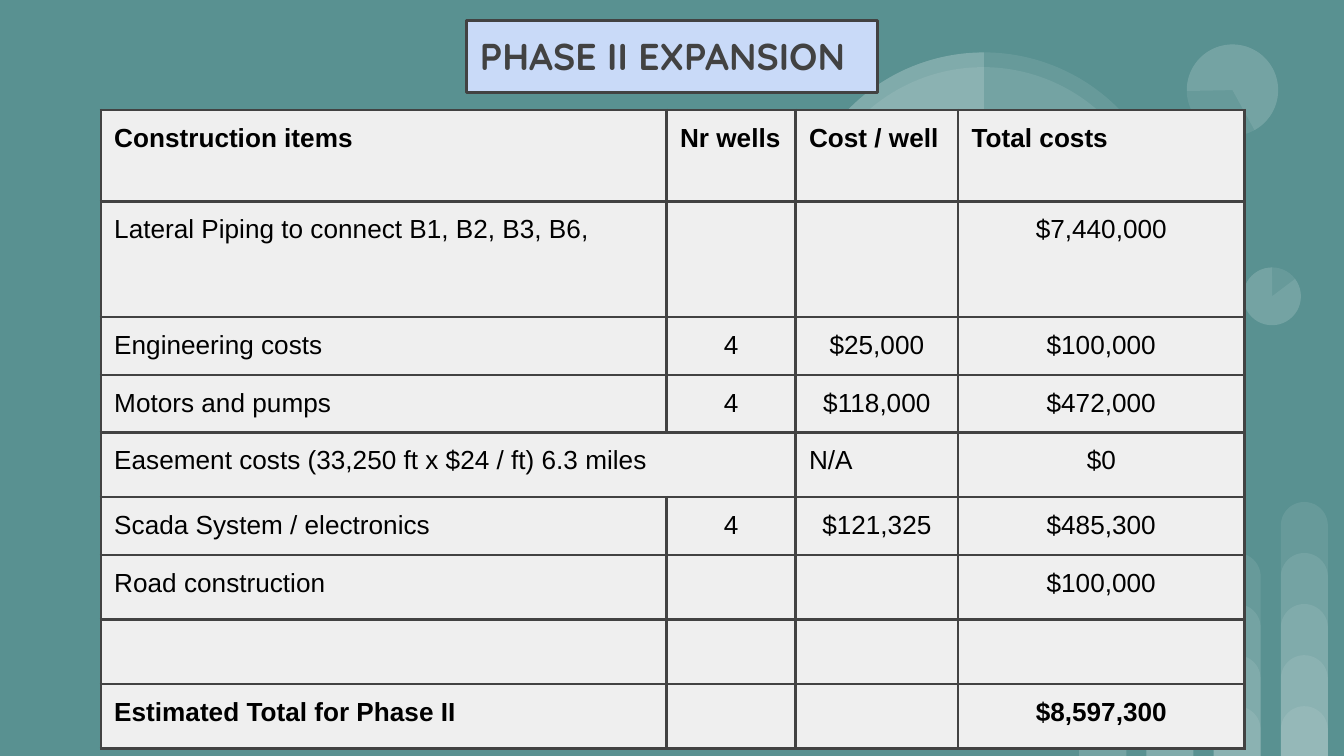
import pptx
import pptx.dml.color
import pptx.enum.shapes
import pptx.enum.text
import pptx.util
from lxml import etree
from pptx.oxml.ns import qn
from pptx.util import Inches

SHAPE = pptx.enum.shapes.MSO_SHAPE
ALIGN = pptx.enum.text.PP_ALIGN
ANCHOR = pptx.enum.text.MSO_ANCHOR

# Content
TITLE = "PHASE II EXPANSION"
ROWS = [
    ("Construction items", "Nr wells", "Cost / well", "Total costs"),
    ("Lateral Piping to connect B1, B2, B3, B6,", "", "", "$7,440,000"),
    ("Engineering costs", "4", "$25,000", "$100,000"),
    ("Motors and pumps", "4", "$118,000", "$472,000"),
    ("Easement costs (33,250 ft x $24 / ft) 6.3 miles", "", "N/A", "$0"),
    ("Scada System / electronics", "4", "$121,325", "$485,300"),
    ("Road construction", "", "", "$100,000"),
    ("", "", "", ""),
    ("Estimated Total for Phase II", "", "", "$8,597,300"),
]
COLUMN_WIDTHS = [4.21, 0.96, 1.21, 2.13]
ROW_HEIGHTS = [0.68, 0.86, 0.43, 0.43, 0.48, 0.43, 0.48, 0.48, 0.48]
EASEMENT_ROW = 4

# Background circles: left, top, diameter, rotation, pie angles (None for a disc)
CIRCLES = [
    (9.25, 1.99, 0.43, 0, None),
    (9.25, 1.99, 0.43, 0, (322.95, 270)),
    (8.83, 0.33, 0.68, 215.9, None),
    (8.83, 0.33, 0.68, 215.9, (322.95, 205.23)),
    (5.91, 0.39, 2.82, 0, None),
    (6.02, 0.5, 2.59, 34.1, None),
    (5.91, 0.39, 2.82, 0, (146.69, 270)),
    (5.91, 0.39, 2.82, 0, (209.24, 270)),
]

TEAL, DARK, PALE, BLUE, WHITE = "599191", "424242", "EFEFEF", "C9DAF8", "FFFFFF"
WIDTH = 10
HEIGHT = WIDTH * 9 / 16
BORDER = pptx.util.Pt(1.5)
MARGINS = {f"margin_{side}": Inches(0.1) for side in ("left", "right", "top", "bottom")}


def apply(target, values):
    for name, value in values.items():
        setattr(target, name, value)


def paint(fill, colour, opacity=None):
    fill.solid()
    fill.fore_color.rgb = pptx.dml.color.RGBColor.from_string(colour)
    if opacity is not None:
        node = fill.fore_color._xFill.find(qn("a:srgbClr"))
        etree.SubElement(node, qn("a:alpha"), val=str(opacity * 1000))


def write(para, text, font, size, colour, bold):
    span = para.add_run()
    span.text = text
    apply(span.font, {"name": font, "size": pptx.util.Pt(size), "bold": bold})
    paint(span.font.fill, colour)


def add_ghost(slide, kind, left, top, width, height):
    shape = slide.shapes.add_shape(kind, *map(Inches, (left, top, width, height)))
    shape.shadow.inherit = False
    shape.line.fill.background()
    paint(shape.fill, WHITE, 9)
    return shape


def add_border(cell):
    properties = cell._tc.get_or_add_tcPr()
    for index, side in enumerate(("lnL", "lnR", "lnT", "lnB")):
        line = etree.Element(qn(f"a:{side}"), w=str(BORDER))
        fill = etree.SubElement(line, qn("a:solidFill"))
        etree.SubElement(fill, qn("a:srgbClr"), val=DARK)
        properties.insert(index, line)


def add_background(slide):
    paint(slide.background.fill, TEAL)
    # Each column of bars is one step taller than the one before
    for column in range(4):
        for level in range(column + 2):
            height = 0.37 + 0.38 * level
            bar = add_ghost(slide, SHAPE.ROUND_2_SAME_RECTANGLE,
                            8.03 + 0.5 * column, HEIGHT - height, 0.35, height)
            bar.adjustments[0] = 0.5
    for left, top, size, rotation, angles in CIRCLES:
        kind = SHAPE.PIE if angles else SHAPE.OVAL
        circle = add_ghost(slide, kind, left, top, size, size)
        circle.rotation = rotation
        for index, angle in enumerate(angles or ()):
            circle.adjustments[index] = angle * 0.6


def add_costs(slide):
    frame = slide.shapes.add_table(
        len(ROWS), len(COLUMN_WIDTHS), Inches(0.75), Inches(0.82),
        Inches(sum(COLUMN_WIDTHS)), Inches(sum(ROW_HEIGHTS)))
    table = frame.table
    for column, width in zip(table.columns, COLUMN_WIDTHS):
        column.width = Inches(width)
    for row, height in zip(table.rows, ROW_HEIGHTS):
        row.height = Inches(height)
    table.cell(EASEMENT_ROW, 0).merge(table.cell(EASEMENT_ROW, 1))

    for i, values in enumerate(ROWS):
        for j, text in enumerate(values):
            cell = table.cell(i, j)
            paint(cell.fill, PALE)
            add_border(cell)
            if not text:
                continue
            apply(cell, MARGINS)
            para = cell.text_frame.paragraphs[0]
            if i and j and text != "N/A":
                para.alignment = ALIGN.CENTER
            write(para, text, "Arial", 14, "000000", i in (0, len(ROWS) - 1))


def add_title(slide):
    title = slide.shapes.title
    apply(title, {"left": Inches(3.47), "top": Inches(0.15),
                  "width": Inches(3.06), "height": Inches(0.54)})
    paint(title.fill, BLUE)
    paint(title.line.fill, DARK)
    title.line.width = BORDER
    apply(title.text_frame, {**MARGINS, "word_wrap": True,
                             "vertical_anchor": ANCHOR.TOP,
                             "auto_size": pptx.enum.text.MSO_AUTO_SIZE.NONE})
    para = title.text_frame.paragraphs[0]
    para.alignment = ALIGN.LEFT
    write(para, TITLE, "Quicksand", 20, DARK, True)
    # Bring the title in front of the background circles
    title.element.getparent().append(title.element)


def main():
    deck = pptx.Presentation()
    apply(deck, {"slide_width": Inches(WIDTH), "slide_height": Inches(HEIGHT)})
    page = deck.slides.add_slide(deck.slide_layouts[5])
    add_background(page)
    add_costs(page)
    add_title(page)
    deck.save("out.pptx")


if __name__ == "__main__":
    main()
